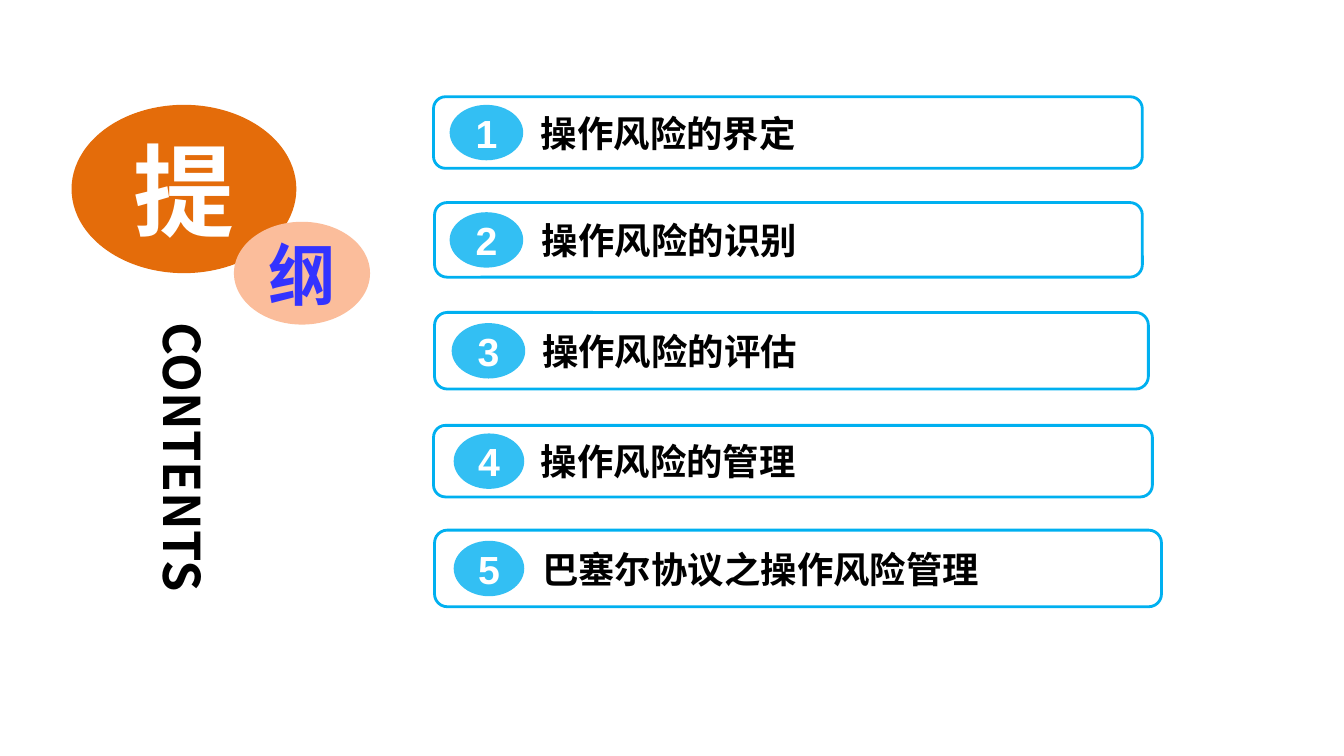
from collections import namedtuple

from lxml import etree
from pptx import Presentation
from pptx import util as u
from pptx.dml.color import RGBColor
from pptx.enum import shapes, text
from pptx.oxml.ns import qn

COLUMNS, ROWS = 133.3, 75
CJK_FONT = "Noto Sans CJK SC"
SKY = "00B0F0"
WHITE = "FFFFFF"

Box = namedtuple("Box", "left top width height")
Topic = namedtuple("Topic", "title box badge_left badge_width")

presentation = Presentation()
presentation.slide_width = u.Inches(13.33)
presentation.slide_height = u.Inches(7.5)
slide = presentation.slides.add_slide(presentation.slide_layouts[6])


def color(hex_string):
    return RGBColor.from_string(hex_string)


def to_emu(box):
    column = presentation.slide_width / COLUMNS
    row = presentation.slide_height / ROWS
    return [round(length * unit) for length, unit in zip(box, (column, row) * 2)]


def add_preset(kind, box, fill, line=None, alpha=None):
    shape = slide.shapes.add_shape(kind, *to_emu(box))
    shape.shadow.inherit = False
    shape.fill.solid()
    shape.fill.fore_color.rgb = color(fill)
    if alpha:
        fill_color = shape._element.spPr.find(qn("a:solidFill"))[0]
        etree.SubElement(fill_color, qn("a:alpha")).set("val", str(alpha * 1000))
    if line:
        shape.line.color.rgb = color(line)
        shape.line.width = u.Pt(2)
    else:
        shape.line.fill.background()
    return shape


def write(shape, words, size, font_color, font_name=CJK_FONT,
          align=text.PP_ALIGN.CENTER, wrap=True, margin_left=None):
    frame = shape.text_frame
    frame.word_wrap = wrap
    frame.vertical_anchor = text.MSO_ANCHOR.MIDDLE
    if margin_left is not None:
        frame.margin_left = margin_left
        frame.margin_top = frame.margin_right = frame.margin_bottom = 0
    paragraph = frame.paragraphs[0]
    paragraph.alignment = align
    run = paragraph.add_run()
    run.text = words
    run.font.size = u.Pt(size)
    run.font.bold = True
    run.font.color.rgb = color(font_color)
    run.font.name = font_name
    etree.SubElement(run.font._element, qn("a:ea")).set("typeface", font_name)


def add_heading(box):
    large = Box(box.left, box.top, 22.3, 16.7)
    small = Box(box.left + 16.1, box.top + 11.6, 13.5, 10.2)
    for word, oval_box, fill, size, font_color in (
            ("提", large, "E46C0A", 72, WHITE),
            ("纲", small, "FBBD9B", 48, "3333FF")):
        oval = add_preset(shapes.MSO_SHAPE.OVAL, oval_box, fill)
        write(oval, word, size, font_color, margin_left=0)
    caption_box = Box(box.left + 6.7, box.top + 21.6, 8.9, box.height - 21.6)
    caption = slide.shapes.add_textbox(*to_emu(caption_box))
    write(caption, "CONTENTS", 36, "000000", align=text.PP_ALIGN.LEFT, margin_left=0)
    caption.text_frame._txBody.bodyPr.set("vert", "eaVert")


def add_topic(number, topic):
    box = topic.box
    frame = add_preset(shapes.MSO_SHAPE.ROUNDED_RECTANGLE, box, WHITE, SKY)
    indent = to_emu(Box(10.3, 0, 0, 0))[0]
    write(frame, topic.title, 26, "000000", align=text.PP_ALIGN.LEFT, margin_left=indent)
    badge_height = 5.5
    badge_box = Box(box.left + topic.badge_left, box.top + (box.height - badge_height) / 2,
                    topic.badge_width, badge_height)
    badge = add_preset(shapes.MSO_SHAPE.OVAL, badge_box, SKY, alpha=80)
    write(badge, str(number), 28, WHITE, "Arial", wrap=False)


def add_agenda(topics):
    for number, topic in enumerate(topics, 1):
        add_topic(number, topic)


add_heading(Box(7.1, 10.4, 29.6, 51.6))
add_agenda([
    Topic("操作风险的界定", Box(43, 9.6, 70.3, 7.1), 1.6, 7.3),
    Topic("操作风险的识别", Box(43.1, 20.1, 70.2, 7.4), 1.5, 7.3),
    Topic("操作风险的评估", Box(43.1, 31, 70.8, 7.6), 1.7, 7.3),
    Topic("操作风险的管理", Box(43, 42.2, 71.3, 7.1), 2, 7),
    Topic("巴塞尔协议之操作风险管理", Box(43.1, 52.6, 72.1, 7.6), 1.9, 7),
])
presentation.save("out.pptx")
